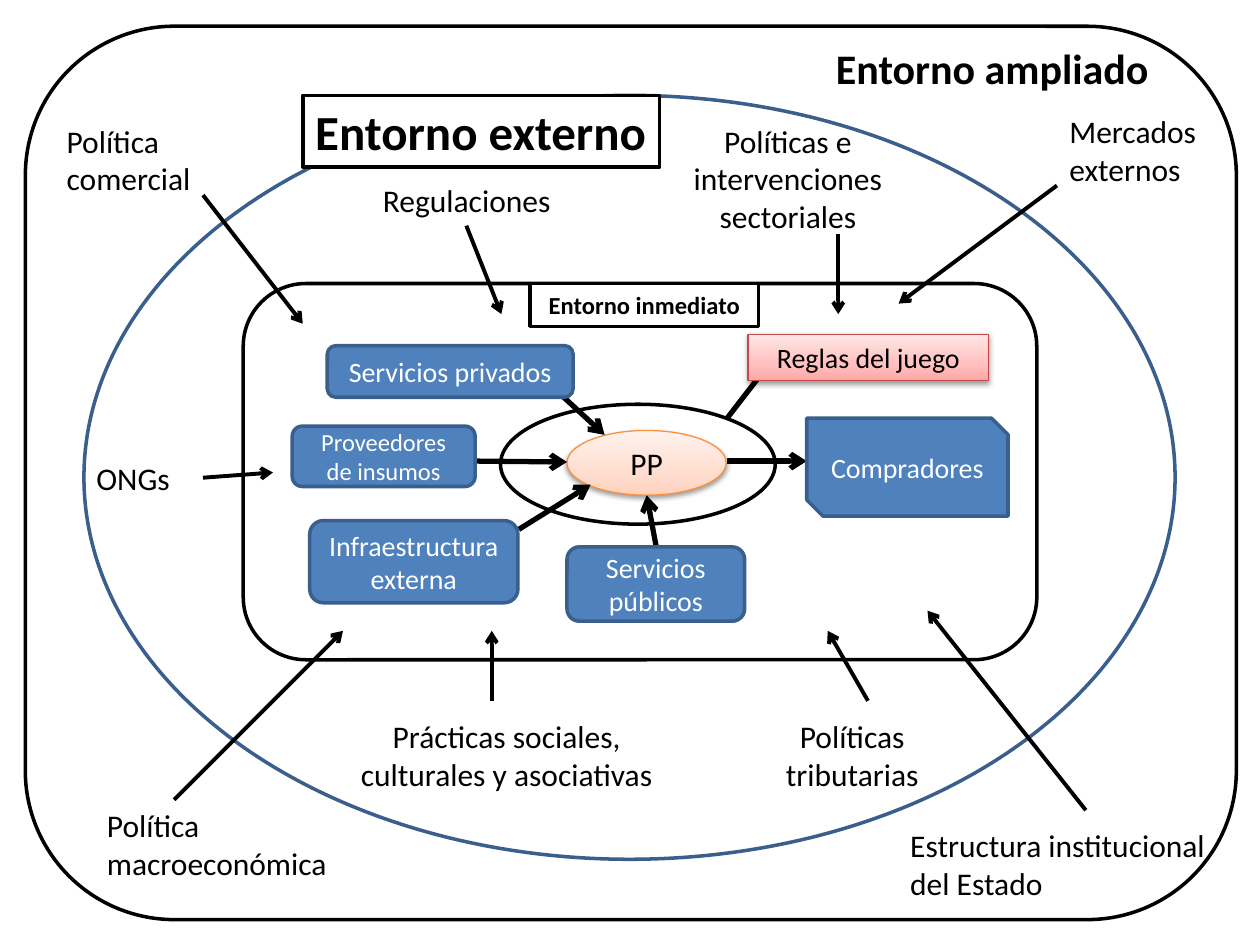
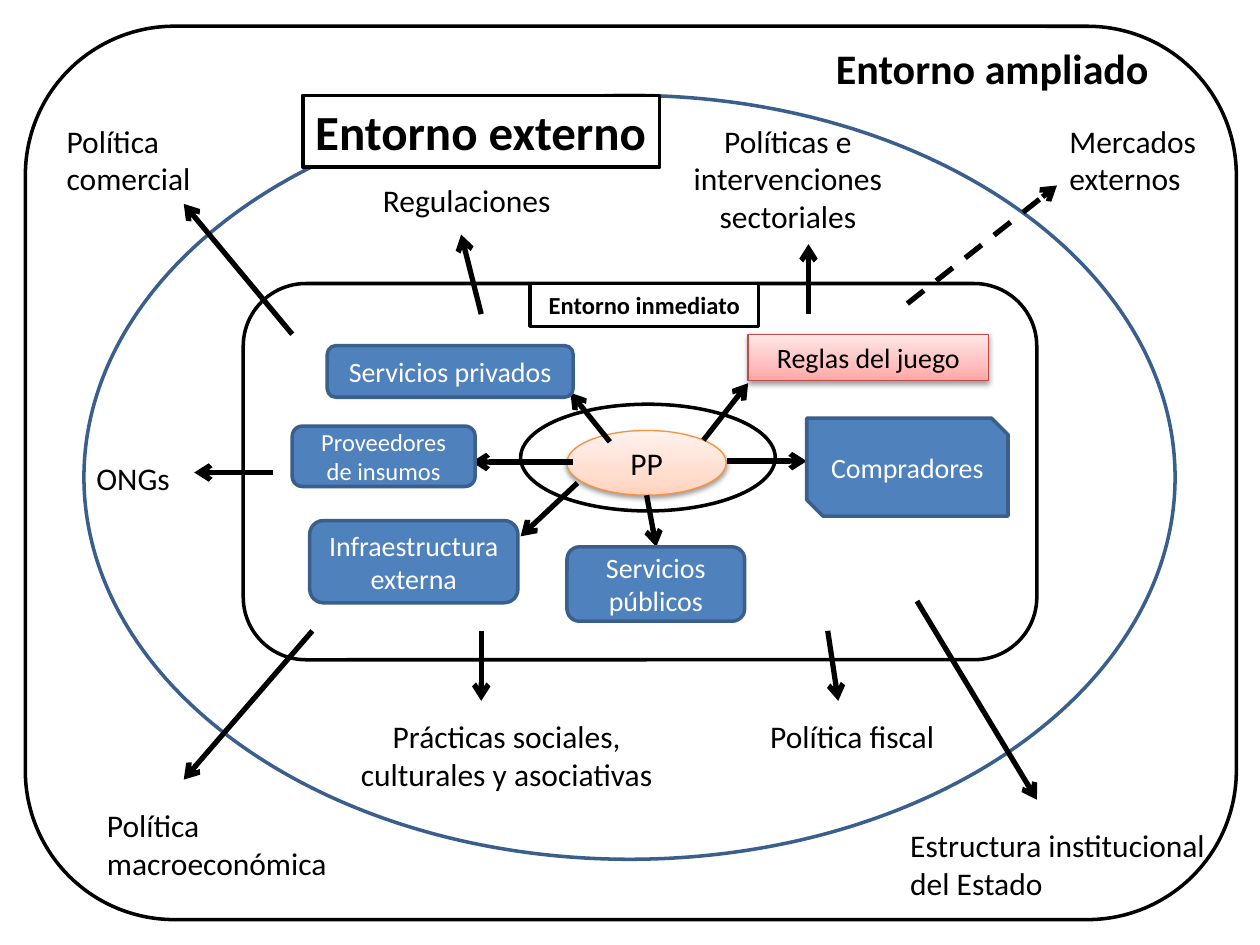
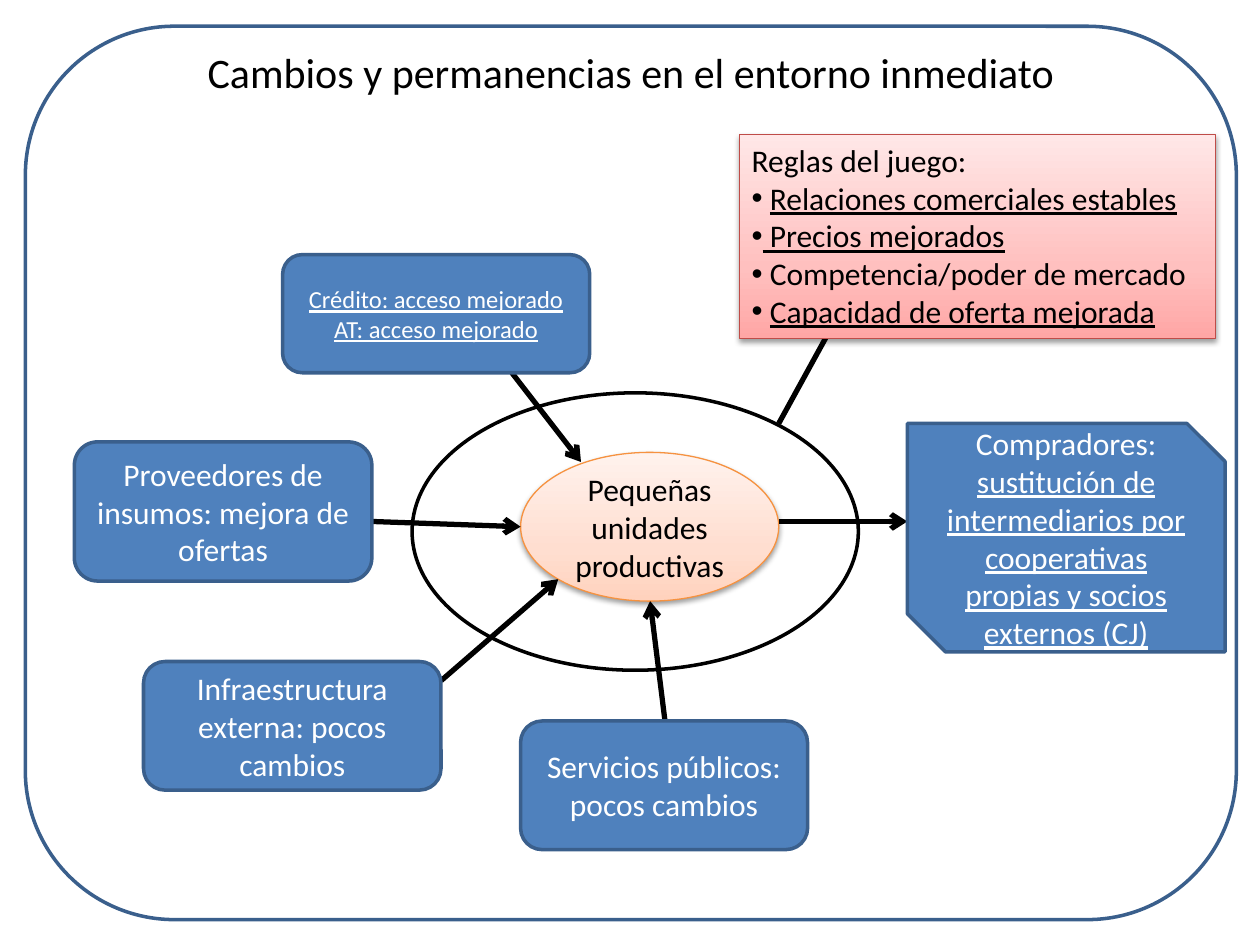
import lxml.etree
import pptx
import pptx.dml.color
import pptx.enum.dml
import pptx.enum.shapes
import pptx.enum.text
import pptx.oxml.ns
import pptx.util

Pt = pptx.util.Pt
RGBColor = pptx.dml.color.RGBColor
Preset = pptx.enum.shapes.MSO_SHAPE
Align = pptx.enum.text.PP_ALIGN
Anchor = pptx.enum.text.MSO_ANCHOR
qn = pptx.oxml.ns.qn

FONT = "Calibri"
BLACK = RGBColor(0x00, 0x00, 0x00)
WHITE = RGBColor(0xFF, 0xFF, 0xFF)
BLUE = RGBColor(0x4F, 0x81, 0xBD)
DARK_BLUE = RGBColor(0x3A, 0x5F, 0x8C)
ORANGE = RGBColor(0xF6, 0x92, 0x40)
RED = RGBColor(0xBF, 0x4C, 0x48)
PEACH_STOPS = ((0, RGBColor(0xFF, 0xD2, 0xBD)), (35, RGBColor(0xFF, 0xDE, 0xD0)),
               (100, RGBColor(0xFF, 0xF2, 0xED)))
PINK_STOPS = ((0, RGBColor(0xFF, 0xA6, 0xA5)), (35, RGBColor(0xFF, 0xC0, 0xBF)),
              (100, RGBColor(0xFF, 0xE7, 0xE7)))

FRAME = (14.5, 15, 692, 510.5)


def points(values):
    return [Pt(value) for value in values]


def sub(parent, tag, **attributes):
    return lxml.etree.SubElement(parent, qn(tag), **attributes)


def write(frame, content, size, color=BLACK, align=Align.CENTER, anchor=Anchor.MIDDLE,
          bold=False, grow=False):
    """Content is a string, or a list of paragraphs made of (text, underlined) runs."""
    paragraphs = [[(content, False)]] if isinstance(content, str) else content
    frame.word_wrap = True
    frame.vertical_anchor = anchor
    if grow:
        frame.auto_size = pptx.enum.text.MSO_AUTO_SIZE.SHAPE_TO_FIT_TEXT
    for index, runs in enumerate(paragraphs):
        paragraph = frame.add_paragraph() if index else frame.paragraphs[0]
        paragraph.alignment = align
        for text, underlined in runs:
            run = paragraph.add_run()
            run.text = text
            run.font.name = FONT
            run.font.size = Pt(size)
            run.font.bold = bold
            run.font.underline = underlined
            run.font.color.rgb = color


def add_bullet(paragraph):
    properties = paragraph._p.get_or_add_pPr()
    sub(properties, "a:buFont", typeface="Arial")
    sub(properties, "a:buChar", char="•")


def add_shape(slide, preset, box, fill=None, line=None, width=2):
    shape = slide.shapes.add_shape(preset, *points(box))
    shape.shadow.inherit = False
    if fill is None:
        shape.fill.background()
    else:
        shape.fill.solid()
        shape.fill.fore_color.rgb = fill
    if line is None:
        shape.line.fill.background()
    else:
        shape.line.color.rgb = line
        shape.line.width = Pt(width)
    return shape


def add_glossy(slide, preset, box, stops, line):
    """Shape with a vertical gradient and a soft shadow below."""
    shape = add_shape(slide, preset, box, line=line, width=0.75)
    shape.fill.gradient()
    shape.fill.gradient_angle = 90
    properties = shape._element.spPr
    stop_list = properties.find(".//" + qn("a:gsLst"))
    for stop in list(stop_list):
        stop_list.remove(stop)
    for position, color in stops:
        stop = sub(stop_list, "a:gs", pos=str(position * 1000))
        sub(stop, "a:srgbClr", val=str(color))
    shadow = sub(properties.find(qn("a:effectLst")), "a:outerShdw", blurRad=str(Pt(3.1)),
                 dist=str(Pt(1.6)), dir="5400000", rotWithShape="0")
    sub(sub(shadow, "a:srgbClr", val=str(BLACK)), "a:alpha", val="38000")
    return shape


def add_line(slide, ends, width=3, arrow=True, dashed=False):
    connector = slide.shapes.add_connector(pptx.enum.shapes.MSO_CONNECTOR.STRAIGHT,
                                           *points(ends))
    connector.line.color.rgb = BLACK
    connector.line.width = Pt(width)
    if dashed:
        connector.line.dash_style = pptx.enum.dml.MSO_LINE.DASH
    if arrow:
        sub(connector.line._get_or_add_ln(), "a:tailEnd", type="arrow")
    sub(connector._element.spPr, "a:effectLst")


def add_actor(slide, text, box, size, preset=Preset.ROUNDED_RECTANGLE):
    actor = add_shape(slide, preset, box, BLUE, DARK_BLUE)
    write(actor.text_frame, text, size, WHITE)


def add_producers(slide, text, box):
    producers = add_glossy(slide, Preset.OVAL, box, PEACH_STOPS, ORANGE)
    write(producers.text_frame, text, 18)


def add_rules(slide, content, box, size, align=Align.CENTER):
    rules = add_glossy(slide, Preset.RECTANGLE, box, PINK_STOPS, RED)
    write(rules.text_frame, content, size, align=align, anchor=Anchor.TOP, grow=True)
    return rules


def add_label(slide, text, box, align=Align.CENTER):
    label = slide.shapes.add_textbox(*points(box))
    write(label.text_frame, text, 18, align=align, anchor=Anchor.TOP, grow=True)


def add_heading(slide, text, box, size, align=Align.CENTER, line=BLACK):
    heading = add_shape(slide, Preset.RECTANGLE, box, WHITE, line)
    write(heading.text_frame, text, size, align=align, anchor=Anchor.TOP, bold=True, grow=True)


def add_environments(prs, ring, inner_arrows, outer_arrows, outer_width, tax_label,
                     markets_top, wide_left, rules_link=None, dashed_arrow=None):
    """Slide with the immediate, external and wider environments around the producers."""
    slide = prs.slides.add_slide(prs.slide_layouts[6])
    add_producers(slide, "PP", (324, 246, 91, 37))
    for ends in inner_arrows:
        add_line(slide, ends)
    for text, box, size in (
        ("Servicios privados", (187, 197.5, 140.5, 29.5), 16),
        ("Proveedores de insumos", (167, 243.5, 104.5, 34.5), 14),
        ("Infraestructura externa", (177, 297.5, 119, 47), 16),
        ("Servicios públicos", (324, 312.5, 101.5, 42.5), 16),
    ):
        add_actor(slide, text, box, size)
    add_actor(slide, "Compradores", (461, 239, 115, 56), 16, Preset.SNIP_2_DIAG_RECTANGLE)
    add_shape(slide, Preset.OVAL, ring, line=BLACK)
    if rules_link:
        add_line(slide, rules_link, arrow=False)
    add_rules(slide, "Reglas del juego", (427.5, 191, 137.5, 26.5), 16)

    add_shape(slide, Preset.ROUNDED_RECTANGLE, (139, 162, 453.5, 215), line=BLACK)
    add_shape(slide, Preset.OVAL, (48, 54.5, 623.5, 436.5), line=DARK_BLUE)
    for text, box in (
        ("Regulaciones", (201.5, 100, 130.5, 29)),
        ("Políticas e intervenciones sectoriales", (388, 66, 124.5, 72.5)),
        ("Prácticas sociales, culturales y asociativas", (196, 406, 187, 51)),
        (tax_label, (427.5, 406, 119, 51 if tax_label.endswith("tributarias") else 29)),
    ):
        add_label(slide, text, box)
    add_heading(slide, "Entorno externo", (173, 54.5, 204, 41), 28, Align.LEFT)
    add_heading(slide, "Entorno ampliado", (wide_left, 21, 663.5 - wide_left, 36), 24,
                Align.RIGHT, line=None)
    add_shape(slide, Preset.ROUNDED_RECTANGLE, FRAME, line=BLACK)
    for text, box in (
        ("ONGs", (48, 258.5, 68, 29)),
        ("Política comercial", (31, 66, 108, 51)),
        ("Política macroeconómica", (54, 457, 142, 51)),
        ("Estructura institucional del Estado", (513, 468.5, 187.5, 51)),
        ("Mercados externos", (604, markets_top, 91, 51)),
    ):
        add_label(slide, text, box, Align.LEFT)
    for ends in outer_arrows:
        add_line(slide, ends, outer_width)
    if dashed_arrow:
        add_line(slide, dashed_arrow, outer_width, dashed=True)
    add_heading(slide, "Entorno inmediato", (303, 162, 130.5, 24.5), 14)


def add_changes(prs):
    """Slide on what changes and what stays in the immediate environment."""
    slide = prs.slides.add_slide(prs.slide_layouts[5])
    title = slide.shapes.title
    title.left, title.top, title.width, title.height = points((36.5, 21, 648, 39.5))
    write(title.text_frame, "Cambios y permanencias en el entorno inmediato", 24)

    add_producers(slide, "Pequeñas unidades productivas", (297.5, 258.5, 147.5, 85))
    for ends in (
        (292.5, 213, 332, 264),
        (212.5, 298, 297.5, 301),
        (252, 389, 319, 331),
        (380, 412, 371.5, 343.5),
        (445, 298, 518.5, 298),
    ):
        add_line(slide, ends)
    services = [[("Crédito: acceso mejorado", True)], [("AT: acceso mejorado", True)]]
    for text, box, size in (
        (services, (161.5, 145.5, 175.5, 67.5), 14),
        ("Proveedores de insumos: mejora de ofertas", (42.5, 252.5, 170, 79.5), 18),
        ("Infraestructura externa: pocos cambios", (82, 378, 170, 73.5), 18),
        ("Servicios públicos: pocos cambios", (297.5, 412, 164, 73.5), 18),
    ):
        add_actor(slide, text, box, size)
    buyers = [[
        ("Compradores: ", False),
        ("sustitución de intermediarios por cooperativas propias y socios externos (CJ)", True),
    ]]
    add_actor(slide, buyers, (518.5, 242, 181.5, 130.5), 18, Preset.SNIP_2_DIAG_RECTANGLE)
    add_shape(slide, Preset.OVAL, (235.5, 224.5, 255, 158.5), line=BLACK)
    add_line(slide, (445, 242, 473, 191), arrow=False)
    rules = add_rules(slide, [
        [("Reglas del juego:", False)],
        [(" ", False), ("Relaciones comerciales estables", True)],
        [(" Precios mejorados", True)],
        [(" Competencia/poder de mercado", False)],
        [(" ", False), ("Capacidad de oferta mejorada", True)],
    ], (422.5, 77, 272, 116.5), 18, Align.LEFT)
    for paragraph in rules.text_frame.paragraphs[1:]:
        add_bullet(paragraph)
    add_shape(slide, Preset.ROUNDED_RECTANGLE, FRAME, line=DARK_BLUE)


def main():
    prs = pptx.Presentation()
    prs.slide_width, prs.slide_height = Pt(720), Pt(540)

    add_environments(
        prs,
        ring=(286, 231, 157, 68.5),
        inner_arrows=(
            (321, 226, 345.5, 248.5),
            (272, 263.5, 324, 264),
            (296.5, 302.5, 337.5, 277),
            (375, 312.5, 369.5, 283),
            (415.5, 263.5, 461, 263.5),
        ),
        rules_link=(415.5, 239, 432.5, 217),
        outer_arrows=(
            (266.5, 129, 286.5, 179.5),
            (116, 273, 156, 270),
            (479, 134, 479, 179.5),
            (281, 400.5, 281, 360.5),
            (496, 400.5, 473, 360.5),
            (116, 111.5, 173, 185),
            (99.5, 457, 196, 360.5),
            (620.5, 463, 530, 349),
            (604, 106, 513.5, 173.5),
        ),
        outer_width=2.25,
        tax_label="Políticas tributarias",
        markets_top=60.5,
        wide_left=462,
    )
    add_environments(
        prs,
        ring=(297.5, 231, 145.5, 61),
        inner_arrows=(
            (348.5, 252.5, 326, 224.5),
            (327.5, 264, 269.5, 264),
            (330, 276, 297.5, 306.5),
            (369.5, 283, 375, 312.5),
            (415.5, 263.5, 461, 263.5),
            (402, 251.5, 427.5, 219),
        ),
        outer_arrows=(
            (275, 179.5, 263.5, 134),
            (156, 270, 111, 270),
            (462, 179.5, 462, 139.5),
            (275, 360.5, 275, 400.5),
            (473, 360.5, 479, 400.5),
            (167, 191, 105, 116.5),
            (178.5, 360.5, 105, 445.5),
            (524, 343.5, 592.5, 457),
        ),
        dashed_arrow=(518.5, 173.5, 604, 106),
        outer_width=3,
        tax_label="Política fiscal",
        markets_top=66,
        wide_left=439.5,
    )
    add_changes(prs)
    prs.save("out.pptx")


if __name__ == "__main__":
    main()
